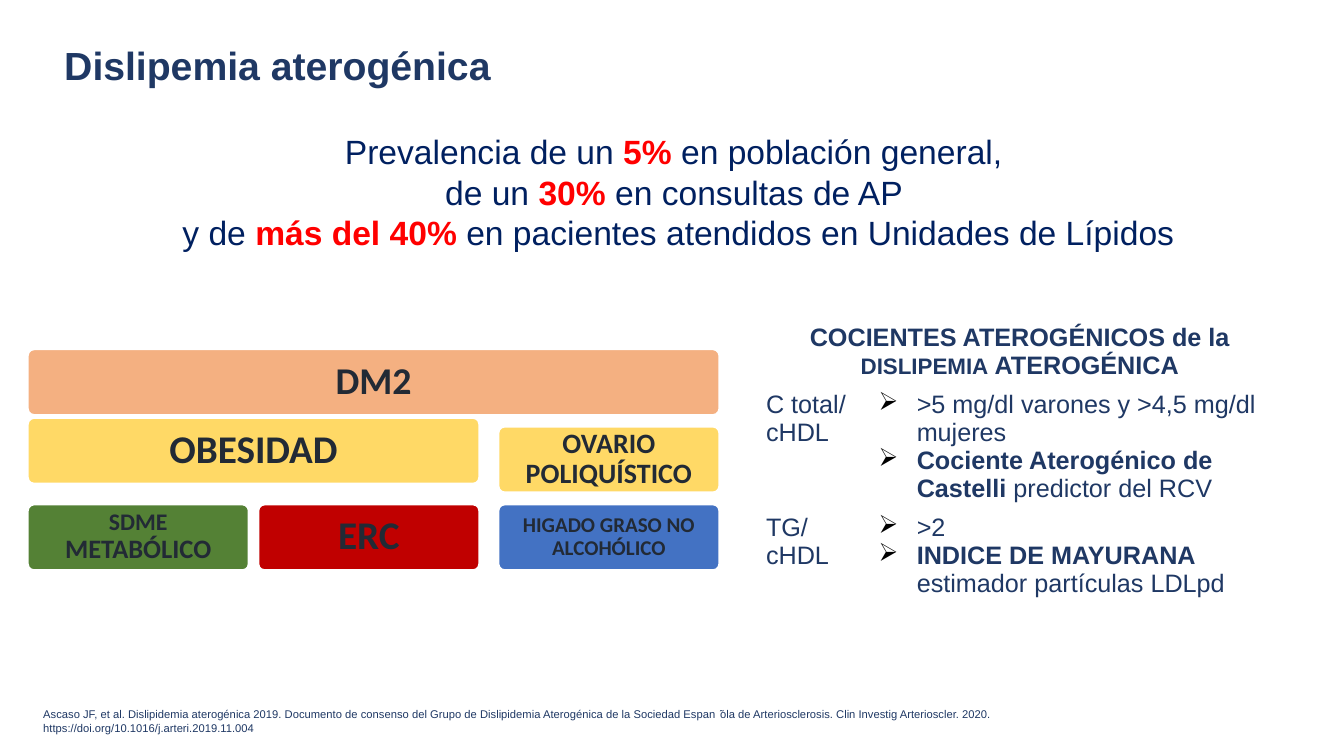
from lxml import etree
from pptx import Presentation
from pptx.dml.color import RGBColor
from pptx.enum.shapes import MSO_SHAPE
from pptx.enum.text import MSO_ANCHOR, PP_ALIGN
from pptx.oxml.ns import qn
from pptx.util import Cm, Pt

ROUNDED = MSO_SHAPE.ROUNDED_RECTANGLE
MIDDLE = MSO_ANCHOR.MIDDLE
LEFT, CENTER = PP_ALIGN.LEFT, PP_ALIGN.CENTER

COLORS = {
    "navy": "1F3864", "blue": "002060", "red": "FF0000", "dark": "222A35",
    "white": "FFFFFF", "black": "000000", "orange": "F4B081", "yellow": "FFD966",
    "green": "548135", "crimson": "C00000", "azure": "4372C3",
}

TITLE = [[("Dislipemia aterogénica", 28, True, "navy")]]
PREVALENCE = [
    [("Prevalencia de un ", 24, False, "blue"), ("5%", 24, True, "red"),
     (" en población general, ", 24, False, "blue")],
    [("de un ", 24, False, "blue"), ("30% ", 24, True, "red"),
     ("en consultas de AP ", 24, False, "blue")],
    [("y de ", 24, False, "blue"), ("más del 40% ", 24, True, "red"),
     ("en pacientes atendidos en Unidades de Lípidos", 24, False, "blue")],
]
CITATION = [[(
    "Ascaso JF, et al. Dislipidemia aterogénica 2019. Documento de consenso del Grupo de "
    "Dislipidemia Aterogénica de la Sociedad Espan ̃ola de Arteriosclerosis. Clin Investig "
    "Arterioscler. 2020. https://doi.org/10.1016/j.arteri.2019.11.004", 8, False, "navy")]]

RATIO_HEADING = [[("COCIENTES ATEROGÉNICOS de la ", 18, True, "navy"),
                  ("DISLIPEMIA", 16, True, "navy"),
                  (" ATEROGÉNICA", 18, True, "navy")]]
RATIOS = [
    ("C total/ cHDL", [
        [(">5 mg/dl varones y >4,5 mg/dl mujeres", 18, False, "navy")],
        [("Cociente Aterogénico de Castelli ", 18, True, "navy"),
         ("predictor del RCV", 18, False, "navy")]]),
    ("TG/ cHDL", [
        [(">2", 18, False, "navy")],
        [("INDICE DE MAYURANA ", 18, True, "navy"),
         ("estimador partículas LDLpd", 18, False, "navy")]]),
]
ARROW_FONT, ARROW_CHAR = "Wingdings", "Ø"

CONDITIONS = [
    (0, 3, 8.79, "orange", 0.34, [("DM2", 27)]),
    (0, 2, 10.52, "yellow", 0.36, [("OBESIDAD", 28)]),
    (0, 1, 12.7, "green", 0.23, [("SDME ", 17), ("METABÓLICO", 19)]),
    (1, 1, 12.7, "crimson", 0.36, [("ERC", 28)]),
    (2, 1, 10.74, "yellow", 0.25, [("OVARIO POLIQUÍSTICO", 20)]),
    (2, 1, 12.7, "azure", 0.2, [("HIGADO GRASO NO ALCOHÓLICO", 15)]),
]
COLUMN_LEFTS = [0.69, 6.5, 12.55]
BOX_WIDTH, BOX_HEIGHT = 5.59, 1.68


def rgb(name):
    return RGBColor.from_string(COLORS[name])


def add_bullet(paragraph):
    props = paragraph._p.get_or_add_pPr()
    props.set("marL", str(Cm(0.96)))
    props.set("indent", str(-Cm(0.96)))
    bullet_color = etree.SubElement(props, qn("a:buClr"))
    etree.SubElement(bullet_color, qn("a:srgbClr")).set("val", COLORS["black"])
    bullet_font = etree.SubElement(props, qn("a:buFont"))
    bullet_font.set("typeface", ARROW_FONT)
    bullet_font.set("pitchFamily", "2")
    bullet_font.set("charset", "2")
    etree.SubElement(props, qn("a:buChar")).set("char", ARROW_CHAR)


def write(frame, paragraphs, align=LEFT, font="Arial", spacing=None, bulleted=False):
    frame.word_wrap = True
    for index, runs in enumerate(paragraphs):
        paragraph = frame.add_paragraph() if index else frame.paragraphs[0]
        paragraph.alignment = align
        if spacing:
            paragraph.line_spacing = spacing
        if bulleted:
            add_bullet(paragraph)
        for text, size, bold, color in runs:
            run = paragraph.add_run()
            run.text = text
            run.font.name = font
            run.font.size = Pt(size)
            run.font.bold = bold
            run.font.color.rgb = rgb(color)


def set_inset(frame, inset):
    frame.margin_left = frame.margin_right = Cm(inset)
    frame.margin_top = frame.margin_bottom = Cm(inset)


def add_text(slide, box, paragraphs, align=LEFT):
    frame = slide.shapes.add_textbox(*map(Cm, box)).text_frame
    write(frame, paragraphs, align)
    return frame


def add_condition(slide, column, span, top, fill, inset, runs):
    left = COLUMN_LEFTS[column]
    width = COLUMN_LEFTS[column + span - 1] + BOX_WIDTH - left
    box = slide.shapes.add_shape(ROUNDED, Cm(left), Cm(top), Cm(width), Cm(BOX_HEIGHT))
    box.adjustments[0] = 0.1
    box.shadow.inherit = False
    box.fill.solid()
    box.fill.fore_color.rgb = rgb(fill)
    box.line.color.rgb = rgb("white")
    box.line.width = Pt(2)
    frame = box.text_frame
    frame.vertical_anchor = MIDDLE
    set_inset(frame, inset)
    write(frame, [[(text, size, True, "dark") for text, size in runs]],
          CENTER, "Calibri", 0.9)


def add_ratio_table(slide):
    table = slide.shapes.add_table(
        len(RATIOS) + 1, 2, Cm(19.05), Cm(8.03), Cm(13.3), Cm(6.25)).table
    table.first_row = table.horz_banding = False
    for column, width in zip(table.columns, (2.84, 10.46)):
        column.width = Cm(width)
    for row, height in zip(table.rows, (1.63, 2.31, 2.31)):
        row.height = Cm(height)
    for cell in table.iter_cells():
        cell.fill.background()
    heading = table.cell(0, 0)
    heading.merge(table.cell(0, 1))
    write(heading.text_frame, RATIO_HEADING, CENTER)
    for row, (ratio, notes) in enumerate(RATIOS, 1):
        write(table.cell(row, 0).text_frame, [[(ratio, 18, False, "navy")]])
        write(table.cell(row, 1).text_frame, notes, bulleted=True)


def main():
    deck = Presentation()
    deck.slide_width, deck.slide_height = Cm(33.87), Cm(19.05)
    slide = deck.slides.add_slide(deck.slide_layouts[6])
    add_ratio_table(slide)
    add_text(slide, (1.37, 3.18, 31.45, 3.33), PREVALENCE, CENTER)
    for condition in CONDITIONS:
        add_condition(slide, *condition)
    add_text(slide, (1.37, 0.91, 27.23, 1.45), TITLE)
    set_inset(add_text(slide, (0.76, 17.5, 26.64, 1.37), CITATION), 0.33)
    deck.save("out.pptx")


if __name__ == "__main__":
    main()
